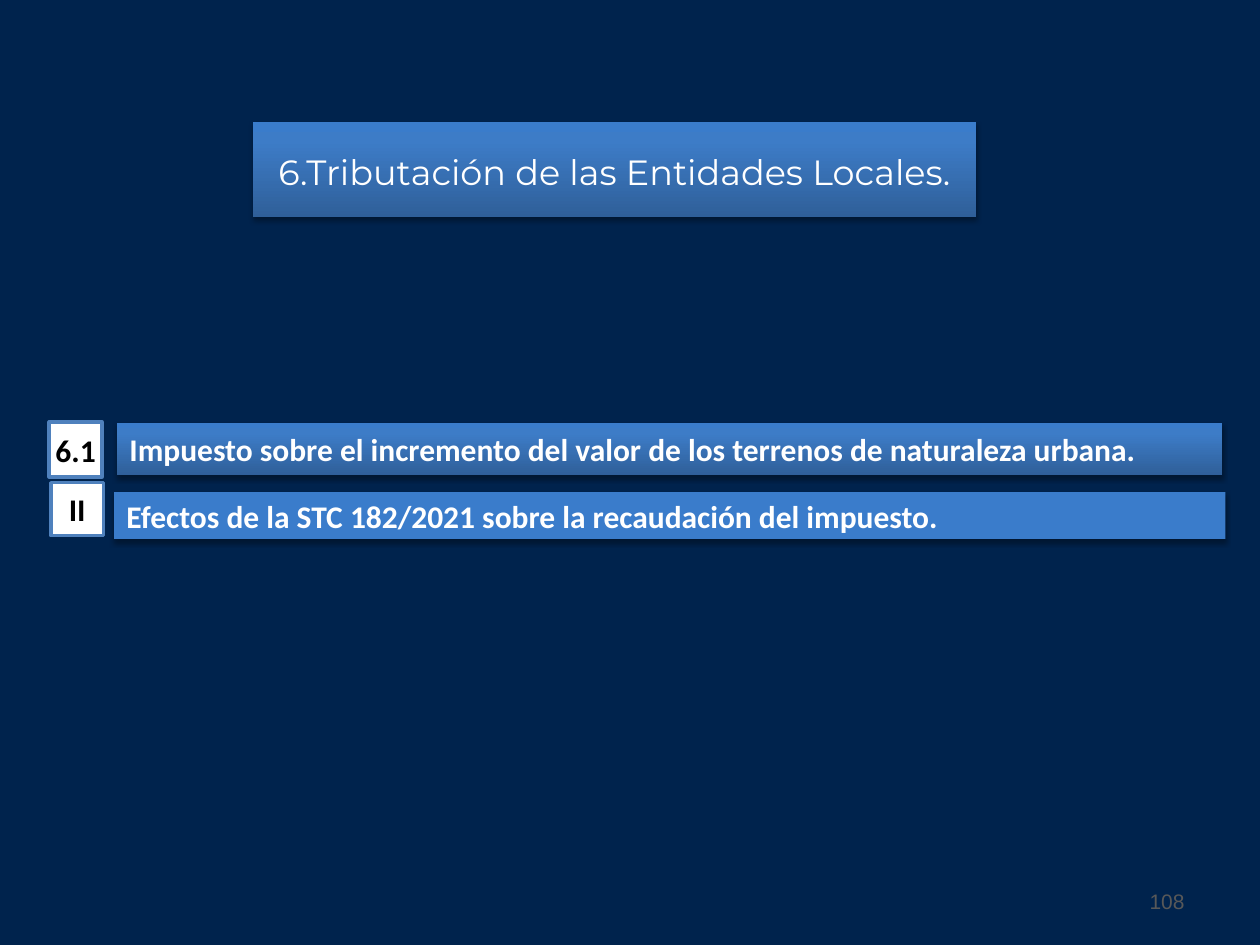
from copy import deepcopy

from lxml import etree
from pptx import Presentation
from pptx.dml.color import RGBColor
from pptx.enum import shapes, text
from pptx.oxml import ns
from pptx.util import Pt

NAVY = RGBColor(0x00, 0x23, 0x4D)
DEEP_BLUE = RGBColor(0x2F, 0x5F, 0x99)
MID_BLUE = RGBColor(0x3D, 0x7C, 0xC7)
BRIGHT_BLUE = RGBColor(0x3A, 0x7C, 0xCB)
BORDER_BLUE = RGBColor(0x4F, 0x81, 0xBD)
WHITE = RGBColor(0xFF, 0xFF, 0xFF)
BLACK = RGBColor(0x00, 0x00, 0x00)
GRAY = RGBColor(0x58, 0x58, 0x58)


def place(shape, box):
    """Move and size a shape to a (left, top, width, height) box in points."""
    shape.left, shape.top, shape.width, shape.height = map(Pt, box)


def write(shape, words, size, font, color, align, bold=False):
    """Set one vertically centred paragraph and its font."""
    frame = shape.text_frame
    frame.text = words
    frame.vertical_anchor = text.MSO_ANCHOR.MIDDLE
    para = frame.paragraphs[0]
    para.alignment = align
    style = para.runs[0].font
    style.size, style.name, style.bold = Pt(size), font, bold
    style.color.rgb = color
    return para


def fill_gradient(shape):
    """Fill a shape with the vertical blue gradient, dark at the bottom."""
    shape.fill.gradient()
    shape.fill.gradient_angle = 90
    stop_list = shape._element.spPr.find(".//" + ns.qn("a:gsLst"))
    stop_list.append(deepcopy(stop_list[-1]))
    stops = zip(shape.fill.gradient_stops, (0, 0.8, 1), (DEEP_BLUE, MID_BLUE, BRIGHT_BLUE))
    for stop, position, color in stops:
        stop.position = position
        stop.color.rgb = color


def add_shadow(shape):
    """Give a shape a soft black shadow below it."""
    shape.shadow.inherit = False
    effects = shape._element.spPr.find(ns.qn("a:effectLst"))
    shadow = etree.SubElement(effects, ns.qn("a:outerShdw"), blurRad=str(Pt(3.1)),
                              dist=str(Pt(1.8)), dir="5400000", rotWithShape="0")
    color = etree.SubElement(shadow, ns.qn("a:srgbClr"), val=str(BLACK))
    etree.SubElement(color, ns.qn("a:alpha"), val="35000")


def add_heading(page, box, words):
    """Turn the title placeholder into the gradient heading panel."""
    title = page.shapes.title
    place(title, box)
    fill_gradient(title)
    add_shadow(title)
    para = write(title, words, 20, "Montserrat", WHITE, text.PP_ALIGN.CENTER)
    para.line_spacing = Pt(26.6)
    frame = title.text_frame
    frame.word_wrap = True
    frame.auto_size = text.MSO_AUTO_SIZE.NONE
    frame.margin_left = frame.margin_right = frame.margin_top = frame.margin_bottom = 0


def add_badge(page, box, words):
    """Add a white numbered badge with a blue border."""
    badge = page.shapes.add_shape(shapes.MSO_SHAPE.RECTANGLE, *map(Pt, box))
    badge.shadow.inherit = False
    badge.fill.solid()
    badge.fill.fore_color.rgb = WHITE
    badge.line.color.rgb = BORDER_BLUE
    badge.line.width = Pt(2)
    write(badge, words, 18, "Calibri", BLACK, text.PP_ALIGN.CENTER, True)
    badge.text_frame.word_wrap = False


def add_bar(page, box, words, shaded):
    """Add a blue topic bar, shaded or plain."""
    bar = page.shapes.add_shape(shapes.MSO_SHAPE.RECTANGLE, *map(Pt, box))
    if shaded:
        fill_gradient(bar)
    else:
        bar.fill.solid()
        bar.fill.fore_color.rgb = BRIGHT_BLUE
    bar.line.fill.background()
    add_shadow(bar)
    write(bar, words, 18, "Calibri", WHITE, text.PP_ALIGN.LEFT, True)
    bar.text_frame.word_wrap = True


def add_page_number(page, box, words):
    """Add the page number at the bottom right."""
    number = page.shapes.add_textbox(*map(Pt, box))
    number.text_frame.word_wrap = True
    write(number, words, 12, "Arial", GRAY, text.PP_ALIGN.RIGHT)


def main():
    """Build and save the section slide."""
    deck = Presentation()
    deck.slide_width, deck.slide_height = Pt(720), Pt(540)
    page = deck.slides.add_slide(deck.slide_layouts[5])
    page.background.fill.solid()
    page.background.fill.fore_color.rgb = NAVY

    add_page_number(page, (516.2, 500.4, 167.8, 28.8), "108")
    add_badge(page, (28.1, 241.2, 30.2, 31.4), "6.1")
    add_badge(page, (29, 275.8, 30.2, 30.2), "II")
    add_bar(page, (65.2, 281.3, 635, 26.7),
            "Efectos de la STC 182/2021 sobre la recaudación del impuesto.", False)
    add_bar(page, (66.9, 241.7, 631.5, 30),
            "Impuesto sobre el incremento del valor de los terrenos de naturaleza urbana.", True)
    add_heading(page, (144.6, 69.8, 413.2, 54.4), "6.Tributación de las Entidades Locales.")
    deck.save("out.pptx")


if __name__ == "__main__":
    main()
